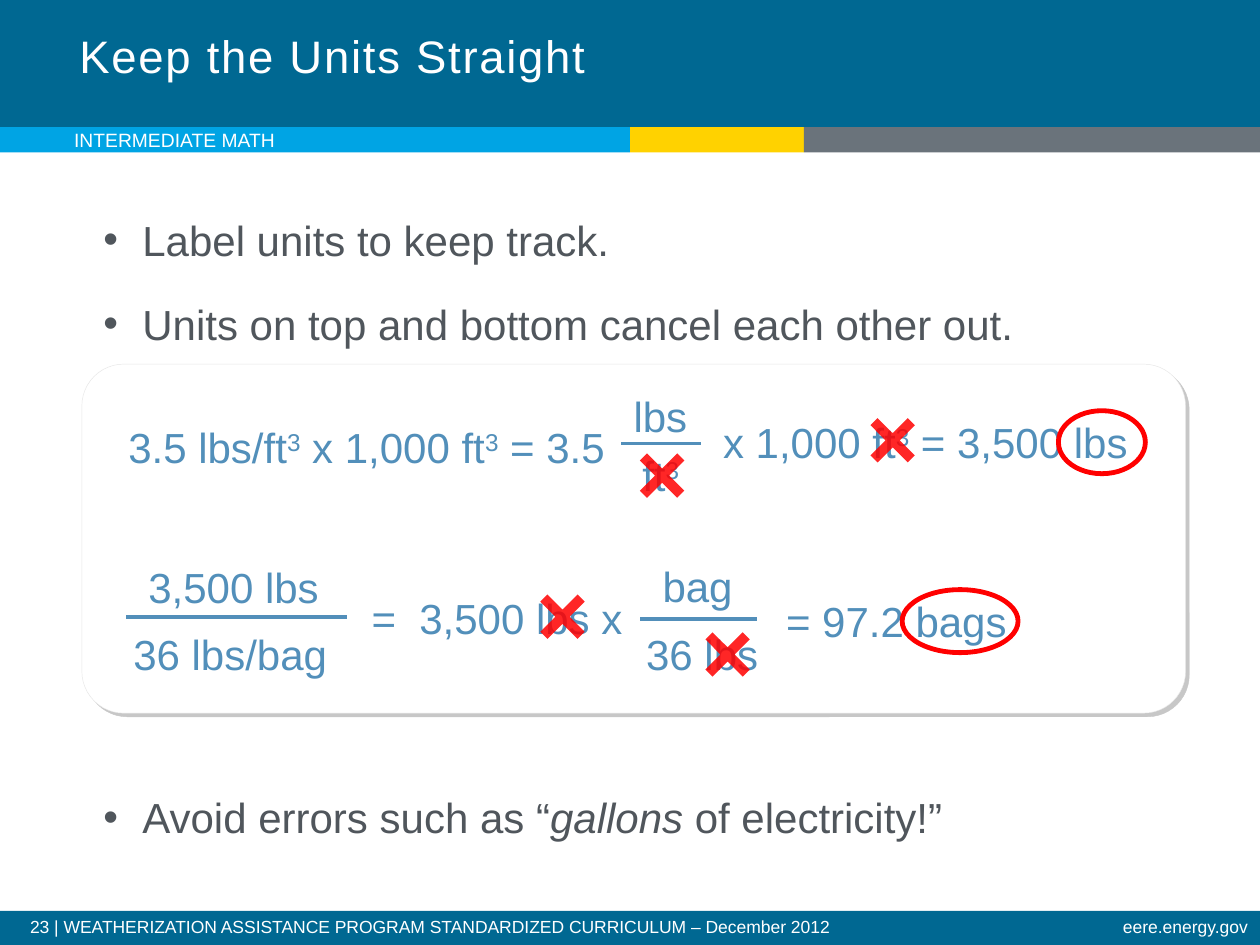
from lxml import etree
from pptx import Presentation
from pptx.dml.color import RGBColor
from pptx.enum.shapes import MSO_CONNECTOR, MSO_SHAPE
from pptx.enum.text import MSO_ANCHOR, MSO_AUTO_SIZE, PP_ALIGN
from pptx.oxml.ns import qn
from pptx.util import Inches, Pt

RECTANGLE = MSO_SHAPE.RECTANGLE
ROUNDED = MSO_SHAPE.ROUNDED_RECTANGLE
OVAL = MSO_SHAPE.OVAL
CROSS = MSO_SHAPE.MATH_MULTIPLY
STRAIGHT = MSO_CONNECTOR.STRAIGHT
LEFT, RIGHT = PP_ALIGN.LEFT, PP_ALIGN.RIGHT
TOP, MIDDLE = MSO_ANCHOR.TOP, MSO_ANCHOR.MIDDLE

FONT = "Arial"
WHITE, NAVY, SKY, YELLOW, GRAY = "FFFFFF", "006892", "00A4E4", "FFD200", "6A737B"
TEXT, FORMULA, RED = "50565C", "528FBA", "FF0000"


def rgb(value):
    """Turn a hex string into a colour."""
    return RGBColor.from_string(value)


def add_xml(parent, tag, **attributes):
    """Append a DrawingML element with the given attributes."""
    return etree.SubElement(parent, qn(tag), attributes)


class SlideBuilder:
    """Holds the style and the current slide."""

    def __init__(self, slide):
        """Start on the given slide."""
        self.slide = slide
        self.shapes = slide.shapes

    def shape(self, kind, left, top, width, height, fill=None, line=None, weight=1):
        """Add a preset shape without a shadow."""
        shape = self.shapes.add_shape(
            kind, Inches(left), Inches(top), Inches(width), Inches(height))
        shape.shadow.inherit = False
        if fill:
            shape.fill.solid()
            shape.fill.fore_color.rgb = rgb(fill)
        else:
            shape.fill.background()
        if line:
            shape.line.color.rgb = rgb(line)
            shape.line.width = Pt(weight)
        else:
            shape.line.fill.background()
        return shape

    def panel(self, left, top, width, height):
        """Add the rounded formula panel with its offset shadow."""
        panel = self.shape(ROUNDED, left, top, width, height, WHITE, "E6E6E6", 0.25)
        panel.adjustments[0] = 0.12
        effects = panel._element.spPr.find(qn("a:effectLst"))
        shadow = add_xml(effects, "a:outerShdw", blurRad="0", dist=str(Pt(3)),
                         dir="2700000", algn="tl", rotWithShape="0")
        color = add_xml(shadow, "a:srgbClr", val="808080")
        add_xml(color, "a:alpha", val="43000")

    def cross(self, left, top):
        """Add a translucent cancelling cross."""
        cross = self.shape(CROSS, left, top, 0.57, 0.57, RED)
        cross.adjustments[0] = 0.14
        color = cross._element.spPr.find(qn("a:solidFill")).find(qn("a:srgbClr"))
        add_xml(color, "a:alpha", val="85000")

    def ring(self, left, top, width):
        """Circle a resulting unit."""
        self.shape(OVAL, left, top, width, 0.5, line=RED, weight=2.75)

    def fraction_bar(self, left, right, y):
        """Draw the bar of a fraction."""
        bar = self.shapes.add_connector(
            STRAIGHT, Inches(left), Inches(y), Inches(right), Inches(y))
        bar.line.color.rgb = rgb(FORMULA)
        bar.line.width = Pt(2.25)
        add_xml(bar._element.spPr, "a:effectLst")

    def style(self, paragraph, size, color, align=LEFT):
        """Set the font and alignment of a paragraph."""
        paragraph.alignment = align
        paragraph.font.name = FONT
        paragraph.font.size = Pt(size)
        paragraph.font.color.rgb = rgb(color)

    def text(self, text, left, top, width, height, size=24, color=FORMULA,
             align=LEFT, spacing=None, tab=None):
        """Add a one-line text box, with superscripts between carets."""
        box = self.shapes.add_textbox(
            Inches(left), Inches(top), Inches(width), Inches(height))
        box.text_frame.word_wrap = True
        paragraph = box.text_frame.paragraphs[0]
        for index, piece in enumerate(text.split("^")):
            if piece:
                run = paragraph.add_run()
                run.text = piece
                if index % 2:
                    run._r.get_or_add_rPr().set("baseline", "30000")
        if tab:
            tabs = add_xml(paragraph._p.get_or_add_pPr(), "a:tabLst")
            add_xml(tabs, "a:tab", pos=str(Inches(tab)), algn="l")
        if spacing:
            paragraph.line_spacing = spacing
        self.style(paragraph, size, color, align)

    def placeholder(self, index, left, top, width, height, anchor):
        """Place a template placeholder in front and return its text frame."""
        shape = self.slide.placeholders[index]
        shape.left, shape.top = Inches(left), Inches(top)
        shape.width, shape.height = Inches(width), Inches(height)
        self.shapes._spTree.append(shape._element)
        frame = shape.text_frame
        frame.word_wrap = True
        frame.auto_size = MSO_AUTO_SIZE.NONE
        frame.vertical_anchor = anchor
        return frame

    def title(self, text):
        """Fill the title placeholder."""
        frame = self.placeholder(0, 0.53, 0, 6.92, 0.92, MIDDLE)
        paragraph = frame.paragraphs[0]
        run = paragraph.add_run()
        run.text = text
        run._r.get_or_add_rPr().set("spc", "100")
        paragraph.line_spacing = Pt(28)
        self.style(paragraph, 26, WHITE)

    def bullets(self, items):
        """Fill the body with (text, space before), italics between asterisks."""
        frame = self.placeholder(1, 0.53, 1.65, 9.05, 5.45, TOP)
        for index, (text, before) in enumerate(items):
            paragraph = frame.add_paragraph() if index else frame.paragraphs[0]
            for part, piece in enumerate(text.split("*")):
                run = paragraph.add_run()
                run.text = piece
                if part % 2:
                    run.font.italic = True
            properties = paragraph._p.get_or_add_pPr()
            properties.set("marL", str(Inches(0.5)))
            properties.set("indent", str(Inches(-0.31)))
            add_xml(properties, "a:buChar", char="•")
            paragraph.space_before = Pt(before)
            paragraph.space_after = Pt(18)
            self.style(paragraph, 24, TEXT)


def main():
    """Build the slide and save it."""
    presentation = Presentation()
    presentation.slide_width, presentation.slide_height = Inches(10), Inches(7.5)
    slide = presentation.slides.add_slide(presentation.slide_layouts[1])
    builder = SlideBuilder(slide)

    for left, top, width, height, fill in (
            (0, 0, 10, 1.01, NAVY), (0, 7.23, 10, 0.27, NAVY),
            (0, 1.01, 5, 0.2, SKY), (5, 1.01, 1.38, 0.2, YELLOW),
            (6.38, 1.01, 3.62, 0.2, GRAY)):
        builder.shape(RECTANGLE, left, top, width, height, fill)
    builder.text(
        "23 | WEATHERIZATION ASSISTANCE PROGRAM STANDARDIZED CURRICULUM – December 2012",
        0.14, 7.24, 7.97, 0.26, 10, WHITE, spacing=0.9)
    builder.text("eere.energy.gov", 5.99, 7.24, 4.01, 0.26, 10, WHITE, RIGHT, 0.9)

    builder.panel(0.65, 2.89, 8.76, 2.77)
    builder.title("Keep the Units Straight")
    builder.bullets((
        ("Label units to keep track.", 0),
        ("Units on top and bottom cancel each other out.", 1.2),
        ("Avoid errors such as “*gallons *of electricity!”", 235)))

    for text, left, top, width in (
            ("3.5 lbs/ft^3^ x 1,000 ft^3^ = 3.5", 0.92, 3.3, 4.83),
            ("lbs", 4.93, 3.05, 1),
            ("ft^3^", 5, 3.52, 0.83),
            ("x 1,000 ft^3^ = 3,500 lbs", 5.64, 3.26, 4.3),
            ("3,500 lbs", 1.08, 4.41, 2.16),
            ("36 lbs/bag", 0.96, 4.94, 2.42),
            ("bag", 5.16, 4.4, 0.88),
            ("36 lbs", 5.03, 4.94, 1.28),
            ("= 97.2 bags", 6.14, 4.68, 2.83)):
        builder.text(text, left, top, width, 0.5)
    builder.text("=\t3,500 lbs x", 2.85, 4.65, 2.92, 0.5, tab=0.38)

    for left, right, y in ((4.93, 5.56, 3.52), (1, 2.75, 4.9), (5.08, 6.01, 4.91)):
        builder.fraction_bar(left, right, y)
    for left, top in ((4.97, 3.49), (6.8, 3.21), (4.18, 4.61), (5.49, 4.91)):
        builder.cross(left, top)
    builder.ring(8.4, 3.26, 0.69)
    builder.ring(7.16, 4.68, 0.92)
    builder.text("INTERMEDIATE MATH", 0.49, 0.97, 3.77, 0.34, 11, WHITE)
    presentation.save("out.pptx")


if __name__ == "__main__":
    main()
